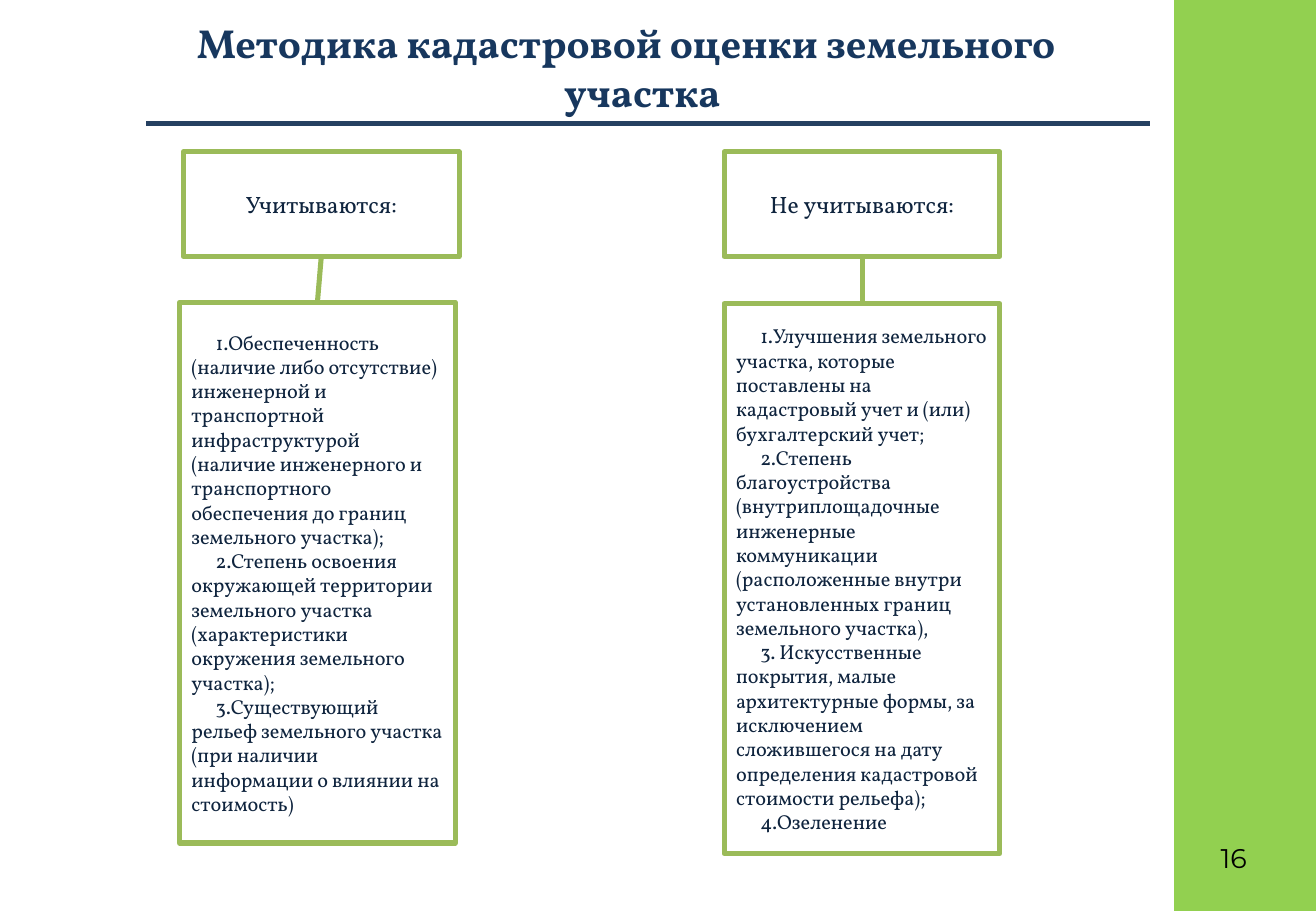
from lxml.etree import SubElement
from pptx import Presentation
from pptx.dml.color import RGBColor
from pptx.enum.shapes import MSO_CONNECTOR, MSO_SHAPE
from pptx.enum.text import MSO_ANCHOR, MSO_AUTO_SIZE, PP_ALIGN
from pptx.oxml.ns import qn
from pptx.util import Pt

COLORS = {
    "white": "FFFFFF", "panel": "92D050", "frame": "9BBB59", "rule": "254061",
    "title": "17375E", "text": "0F243E", "number": "000000",
}
TITLE_FONT = {"name": "Vollkorn", "size": Pt(24), "bold": True}
HEAD_FONT = {"name": "Vollkorn", "size": Pt(14)}
LIST_FONT = {"name": "Vollkorn", "size": Pt(12)}
NUMBER_FONT = {"name": "Montserrat", "size": Pt(16)}

TITLE = "Методика кадастровой оценки земельного участка"
COUNTED = [
    "Обеспеченность (наличие либо отсутствие) инженерной и транспортной инфраструктурой "
    "(наличие инженерного и транспортного обеспечения до границ земельного участка);",
    "Степень освоения окружающей территории земельного участка "
    "(характеристики окружения земельного участка);",
    "Существующий рельеф земельного участка (при наличии информации о влиянии на стоимость)",
]
NOT_COUNTED = [
    "Улучшения земельного участка, которые поставлены на кадастровый учет и (или) "
    "бухгалтерский учет;",
    "Степень благоустройства (внутриплощадочные инженерные коммуникации "
    "(расположенные внутри установленных границ земельного участка),",
    " Искусственные покрытия, малые архитектурные формы, за исключением сложившегося "
    "на дату определения кадастровой стоимости рельефа);",
    "Озеленение",
]
HEAD_TOP, HEAD_HEIGHT, BOX_WIDTH = 90, 62, 163.5


def rgb(name):
    return RGBColor.from_string(COLORS[name])


def write(p, text, font, color):
    r = p.add_run()
    r.text = text
    for key, value in font.items():
        setattr(r.font, key, value)
    r.font.color.rgb = rgb(color)


def add_rect(s, box, fill, line=None):
    sp = s.shapes.add_shape(MSO_SHAPE.RECTANGLE, *map(Pt, box))
    sp.shadow.inherit = False
    sp.fill.solid()
    sp.fill.fore_color.rgb = rgb(fill)
    if line:
        sp.line.color.rgb = rgb(line)
        sp.line.width = Pt(3)
    else:
        sp.line.fill.background()
    return sp


def add_line(s, color, x1=0, y1=0, x2=0, y2=0):
    line = s.shapes.add_connector(MSO_CONNECTOR.STRAIGHT, *map(Pt, (x1, y1, x2, y2)))
    line.line.color.rgb = rgb(color)
    line.line.width = Pt(3)
    SubElement(line._element.spPr, qn("a:effectLst"))
    return line


def add_title(s, left, top, width, height):
    sp = s.shapes.title
    place = {"left": left, "top": top, "width": width, "height": height}
    for key, value in place.items():
        setattr(sp, key, Pt(value))
    tf = sp.text_frame
    layout = {"word_wrap": True, "auto_size": MSO_AUTO_SIZE.NONE,
              "vertical_anchor": MSO_ANCHOR.MIDDLE}
    for key, value in layout.items():
        setattr(tf, key, value)
    p = tf.paragraphs[0]
    p.alignment = PP_ALIGN.CENTER
    p.space_before = Pt(4.8)
    pPr = p._p.get_or_add_pPr()
    pPr.set("marL", str(Pt(44.6)))
    pPr.set("indent", str(Pt(-19.4)))
    write(p, TITLE, TITLE_FONT, "title")
    rule_y = top + height + 6
    add_line(s, "rule", left + 6, rule_y, left + width + 45, rule_y)


def add_column(s, head_left, heading, list_left, list_top, list_height, items):
    head = add_rect(s, (head_left, HEAD_TOP, BOX_WIDTH, HEAD_HEIGHT), "white", "frame")
    p = head.text_frame.paragraphs[0]
    p.alignment = PP_ALIGN.CENTER
    write(p, heading, HEAD_FONT, "text")

    body = add_rect(s, (list_left, list_top, BOX_WIDTH, list_height), "white", "frame")
    tf = body.text_frame
    for i, item in enumerate(items):
        p = tf.add_paragraph() if i else tf.paragraphs[0]
        p.alignment = PP_ALIGN.LEFT
        pPr = p._p.get_or_add_pPr()
        pPr.set("marL", "0")
        pPr.set("indent", str(Pt(14.4)))
        SubElement(pPr, qn("a:buFont"), typeface="+mj-lt")
        SubElement(pPr, qn("a:buAutoNum"), type="arabicPeriod")
        write(p, item, LIST_FONT, "text")

    link = add_line(s, "frame")
    link.begin_connect(head, 2)
    link.end_connect(body, 0)


def add_side_panel(s, left, top, width, height):
    add_rect(s, (left, top, width, height), "panel")
    sp = s.shapes.add_textbox(Pt(left + 20.4), Pt(top + height - 44.6), Pt(36), Pt(26.6))
    tf = sp.text_frame
    tf.word_wrap = False
    write(tf.paragraphs[0], "16", NUMBER_FONT, "number")


def main():
    prs = Presentation()
    prs.slide_width, prs.slide_height = Pt(780), Pt(540)
    s = prs.slides.add_slide(prs.slide_layouts[5])
    add_title(s, 80.6, 11.5, 555.8, 56)
    add_side_panel(s, 696, 0, 84, 540)
    add_column(s, 108.7, "Учитываются:", 106.4, 179.2, 320.5, COUNTED)
    add_column(s, 429.2, "Не учитываются:", 429.2, 180, 326, NOT_COUNTED)
    prs.save("out.pptx")


if __name__ == "__main__":
    main()
